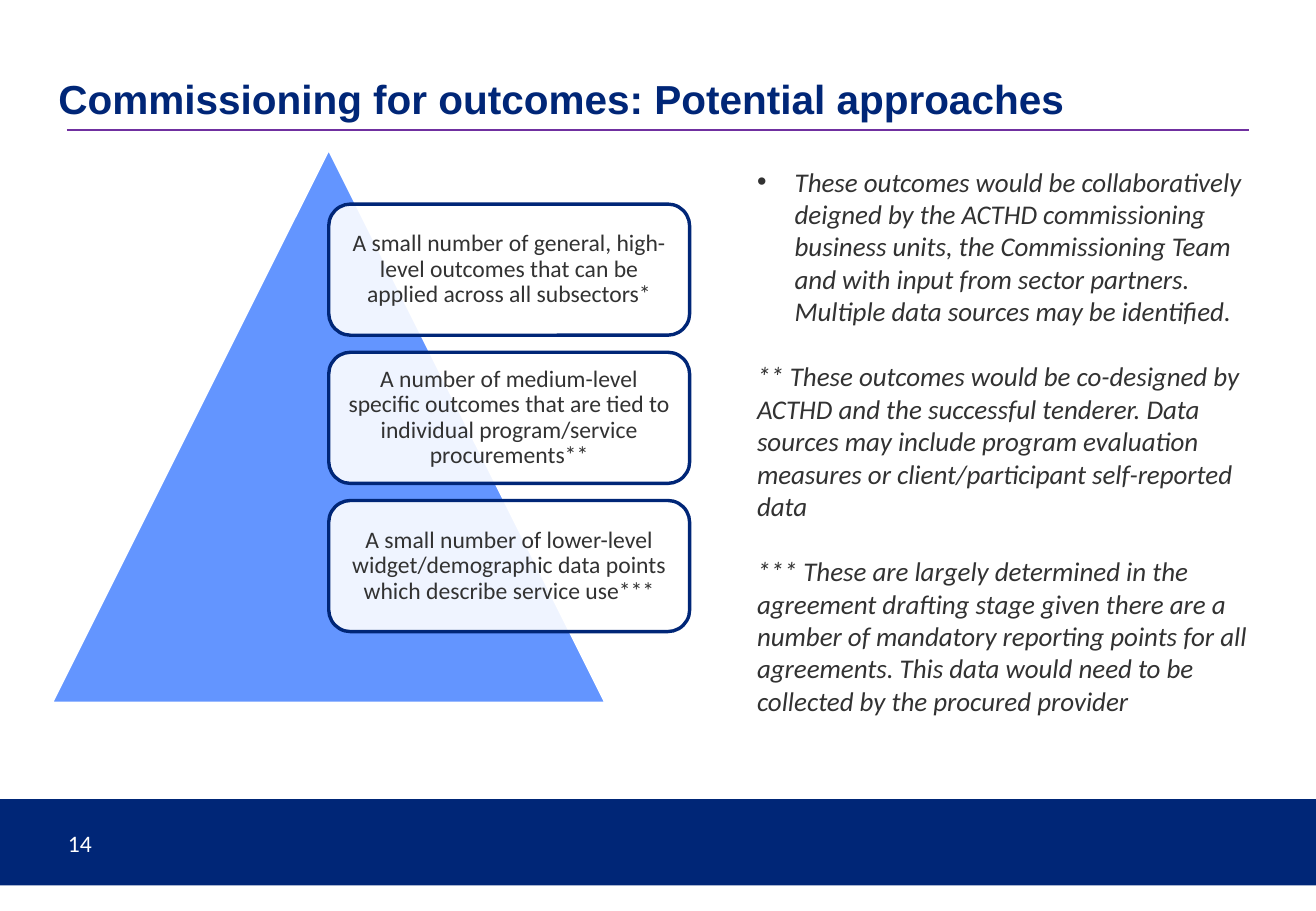
import dataclasses

import lxml.etree
import pptx
import pptx.dml.color
import pptx.enum.shapes
import pptx.enum.text
import pptx.oxml.ns
import pptx.util

Inches = pptx.util.Inches
Shape = pptx.enum.shapes.MSO_SHAPE
Align = pptx.enum.text.PP_ALIGN
Anchor = pptx.enum.text.MSO_ANCHOR
qn = pptx.oxml.ns.qn


@dataclasses.dataclass(frozen=True)
class Theme:
    navy: str = "002677"
    blue: str = "6395FF"
    purple: str = "7030A0"
    white: str = "FFFFFF"
    ink: str = "323232"
    head: str = "Arial"
    body: str = "Calibri"
    title: int = 24
    note: int = 16
    card: int = 14


THEME = Theme()
LEVELS = [
    "A small number of general, high-level outcomes that can be applied across all subsectors*",
    "A number of medium-level specific outcomes that are tied to individual "
    "program/service procurements**",
    "A small number of lower-level widget/demographic data points which describe service use***",
]
NOTES = [
    "These outcomes would be collaboratively deigned by the ACTHD commissioning business units, "
    "the Commissioning Team and with input from sector partners. "
    "Multiple data sources may be identified.",
    "** These outcomes would be co-designed by ACTHD and the successful tenderer. Data sources "
    "may include program evaluation measures or client/participant self-reported data",
    "*** These are largely determined in the agreement drafting stage given there are a number "
    "of mandatory reporting points for all agreements. This data would need to be collected "
    "by the procured provider",
]


def color(code):
    return pptx.dml.color.RGBColor.from_string(code)


def style(para, size, code, face=THEME.body, bold=False, italic=False):
    for run in para.runs:
        font = run.font
        font.name, font.size = face, pptx.util.Pt(size)
        font.bold, font.italic = bold, italic
        font.color.rgb = color(code)


def place(item, box):
    item.left, item.top, item.width, item.height = map(Inches, box)


def add_block(slide, kind, box, fill, edge=None):
    """Add a flat shape, outlined at 2 pt when an edge colour is given."""
    block = slide.shapes.add_shape(kind, *map(Inches, box))
    block.shadow.inherit = False
    block.fill.solid()
    block.fill.fore_color.rgb = color(fill)
    if edge:
        block.line.color.rgb = color(edge)
        block.line.width = pptx.util.Pt(2)
    else:
        block.line.fill.background()
    return block


def add_title(slide, box, text):
    """Place the title with a rule along the bottom of its box."""
    left, top, width, height = box
    title = slide.shapes.title
    place(title, box)
    frame = title.text_frame
    frame.text = text
    frame.vertical_anchor = Anchor.BOTTOM
    frame.auto_size = pptx.enum.text.MSO_AUTO_SIZE.NONE
    frame.paragraphs[0].alignment = Align.LEFT
    style(frame.paragraphs[0], THEME.title, THEME.navy, THEME.head, bold=True)

    base = Inches(top + height + 0.01)
    rule = slide.shapes.add_connector(
        pptx.enum.shapes.MSO_CONNECTOR.STRAIGHT,
        Inches(left + 0.17), base, Inches(left + width + 0.15), base)
    rule.line.color.rgb = color(THEME.purple)
    rule.line.width = pptx.util.Pt(0.75)
    props = rule._element.find(qn("p:spPr"))
    lxml.etree.SubElement(props, qn("a:effectLst"))


def add_card(slide, box, text):
    card = add_block(slide, Shape.ROUNDED_RECTANGLE, box, THEME.white, THEME.navy)
    tint = card._element.find(".//" + qn("a:solidFill"))[0]
    lxml.etree.SubElement(tint, qn("a:alpha"), val="90000")
    frame = card.text_frame
    frame.text = text
    frame.word_wrap = True
    frame.vertical_anchor = Anchor.MIDDLE
    frame.margin_left = frame.margin_right = Inches(0.06)
    frame.margin_top = frame.margin_bottom = Inches(0.06)
    para = frame.paragraphs[0]
    para.alignment = Align.CENTER
    para.line_spacing = 0.9
    style(para, THEME.card, THEME.ink)


def add_pyramid(slide, box, levels):
    """Draw the triangle with cards stacked from its centre line."""
    left, top, side, height = box
    add_block(slide, Shape.ISOSCELES_TRIANGLE, box, THEME.blue, THEME.white)
    for row, text in enumerate(levels):
        y = top + 0.46 + row * 1.22
        add_card(slide, (left + side / 2, y, side * 0.65, 1.08), text)


def add_notes(slide, box, notes):
    """Fill the body placeholder: one bullet, then plain paragraphs."""
    body = slide.placeholders[1]
    place(body, box)
    frame = body.text_frame
    frame.text = "\n".join(notes)
    frame.auto_size = pptx.enum.text.MSO_AUTO_SIZE.NONE
    for row, para in enumerate(frame.paragraphs):
        props = para._p.get_or_add_pPr()
        if row == 0:
            indent = Inches(0.31)
            lxml.etree.SubElement(props, qn("a:buFont"), typeface="Arial")
            lxml.etree.SubElement(props, qn("a:buChar"), char="•")
        else:
            indent = 0
            lxml.etree.SubElement(props, qn("a:buNone"))
        props.set("marL", str(indent))
        props.set("indent", str(-indent))
        para.space_before = pptx.util.Pt(19.5 if row else 0)
        style(para, THEME.note, THEME.ink, italic=True)


def add_footer(slide, box, number):
    left, top, width, height = box
    add_block(slide, Shape.RECTANGLE, box, THEME.navy)
    label = slide.shapes.add_textbox(
        *map(Inches, (left + 0.46, top + 0.16, 3, 0.4)))
    frame = label.text_frame
    frame.text = number
    frame.word_wrap = True
    frame.vertical_anchor = Anchor.MIDDLE
    style(frame.paragraphs[0], THEME.card, THEME.white)


def main():
    deck = pptx.Presentation()
    deck.slide_width, deck.slide_height = Inches(10.83), Inches(7.5)
    slide = deck.slides.add_slide(deck.slide_layouts[1])
    add_footer(slide, (0, 6.58, 10.83, 0.71), "14")
    add_title(slide, (0.38, 0.29, 9.75, 0.77),
              "Commissioning for outcomes: Potential approaches")
    add_pyramid(slide, (0.42, 1.22, 4.57, 4.57), LEVELS)
    add_notes(slide, (6.13, 1.31, 4.47, 4.68), NOTES)
    deck.save("out.pptx")


if __name__ == "__main__":
    main()
